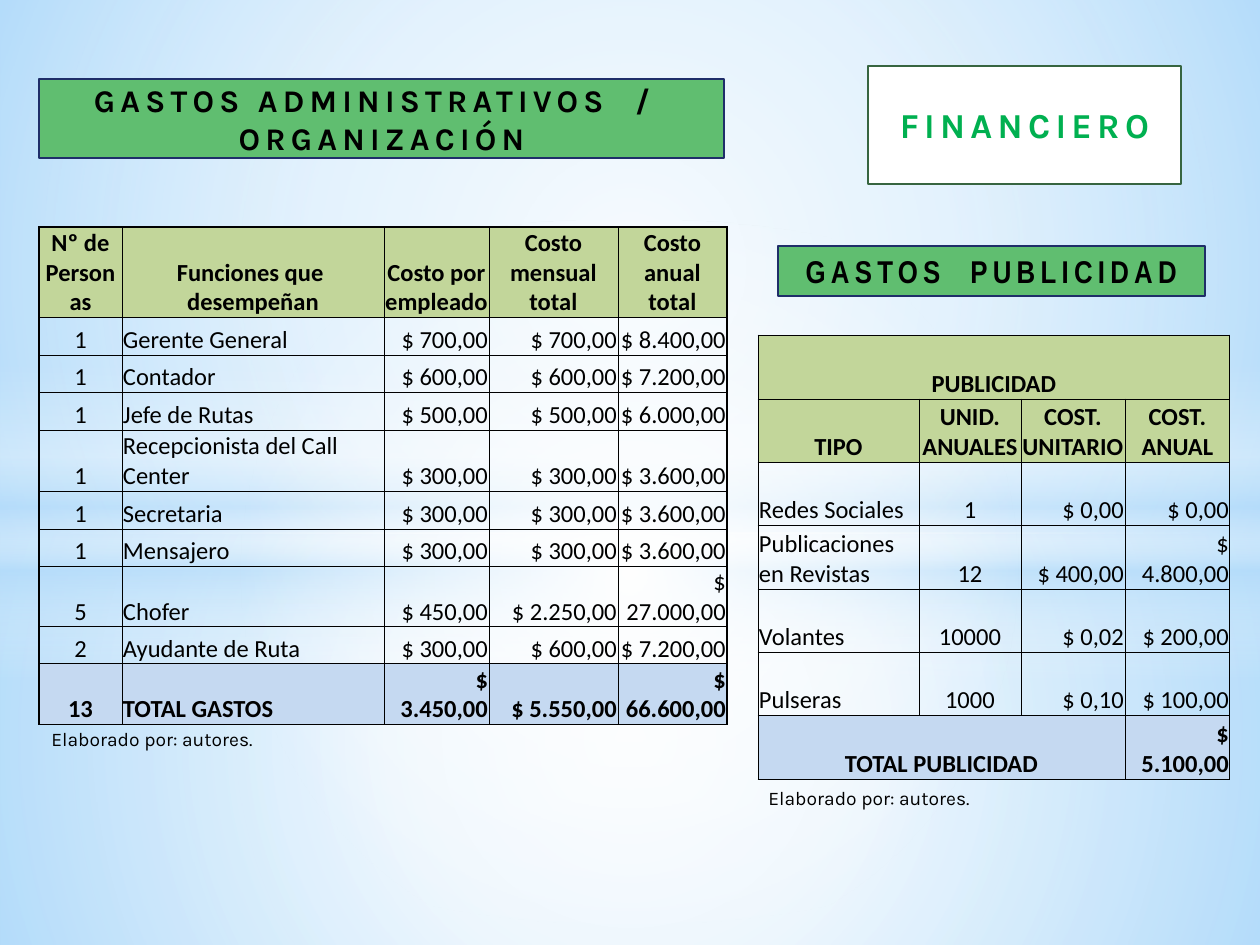
from dataclasses import dataclass
from typing import Optional

from lxml.etree import SubElement
from pptx import Presentation
from pptx.dml.color import RGBColor
from pptx.enum.shapes import MSO_SHAPE
from pptx.enum.text import MSO_ANCHOR, MSO_AUTO_SIZE, PP_ALIGN
from pptx.oxml.ns import qn
from pptx.util import Pt

EMU_PER_PX = 914400 / 126

WHITE = RGBColor(0xFF, 0xFF, 0xFF)
BLACK = RGBColor(0x00, 0x00, 0x00)
SKY = RGBColor(0xB4, 0xDC, 0xFA)
GREEN = RGBColor(0x60, 0xBE, 0x70)
NAVY = RGBColor(0x1F, 0x2E, 0x69)
DARK_GREEN = RGBColor(0x37, 0x65, 0x40)
TEXT_GREEN = RGBColor(0x00, 0xB0, 0x50)
LIME = RGBColor(0x81, 0xD3, 0x1A)
HEADER_FILL = RGBColor(0xC2, 0xD6, 0x9A)
TOTAL_FILL = RGBColor(0xC5, 0xD9, 0xF1)

LEFT, CENTER, RIGHT = PP_ALIGN.LEFT, PP_ALIGN.CENTER, PP_ALIGN.RIGHT
Box = tuple[int, int, int, int]


@dataclass
class Glow:
    box: Box
    stops: list[tuple[int, RGBColor, int]]  # position %, colour, opacity %
    preset: MSO_SHAPE = MSO_SHAPE.RECTANGLE
    radial: bool = True


@dataclass
class Banner:
    box: Box
    text: str
    font: str = "Karla"
    size: int = 18
    fill: RGBColor = GREEN
    line: RGBColor = NAVY
    color: RGBColor = BLACK
    outline: Optional[RGBColor] = None


@dataclass
class CostTable:
    left: int
    top: int
    columns: list[int]
    rows: list[int]
    alignments: list[PP_ALIGN]
    cells: list[list[str]]
    header_rows: int
    edge_points: float
    merges: list[tuple[int, int, int]]  # row, first column, last column


GLOWS = [
    Glow((0, 533, 1260, 412), [(0, WHITE, 91), (37, WHITE, 76), (100, SKY, 79)]),
    Glow((0, 0, 1260, 533), [(0, WHITE, 89), (48, WHITE, 62), (100, SKY, 79)]),
    Glow((0, 365, 1260, 315),
         [(0, WHITE, 0), (29, WHITE, 30), (45, SKY, 40),
          (55, WHITE, 26), (65, SKY, 60), (100, WHITE, 0)], radial=False),
    Glow((0, 220, 1260, 703), [(0, WHITE, 100), (54, WHITE, 0)], MSO_SHAPE.OVAL),
]

BANNERS = [
    Banner((39, 79, 685, 79), "GASTOS ADMINISTRATIVOS  /  ORGANIZACIÓN"),
    Banner((778, 246, 427, 50), "GASTOS  PUBLICIDAD", "Arial Narrow"),
    Banner((868, 66, 313, 118), "FINANCIERO", size=20, fill=WHITE,
           line=DARK_GREEN, color=TEXT_GREEN, outline=LIME),
]

STAFF_TABLE = CostTable(
    39, 227, [83, 262, 105, 129, 109], [74, *[38, 37] * 4, 39],
    [CENTER, LEFT, RIGHT, RIGHT, RIGHT],
    [
        ["Nº de\nPersonas", "Funciones que \ndesempeñan", "Costo por\nempleado",
         "Costo mensual\ntotal", "Costo anual\ntotal"],
        ["1", "Gerente General", "$ 700,00", "$ 700,00", "$ 8.400,00"],
        ["1", "Contador", "$ 600,00", "$ 600,00", "$ 7.200,00"],
        ["1", "Jefe de Rutas", "$ 500,00", "$ 500,00", "$ 6.000,00"],
        ["1", "Recepcionista del Call Center", "$ 300,00", "$ 300,00", "$ 3.600,00"],
        ["1", "Secretaria", "$ 300,00", "$ 300,00", "$ 3.600,00"],
        ["1", "Mensajero", "$ 300,00", "$ 300,00", "$ 3.600,00"],
        ["5", "Chofer", "$ 450,00", "$ 2.250,00", "$ 27.000,00"],
        ["2", "Ayudante de Ruta", "$ 300,00", "$ 600,00", "$ 7.200,00"],
        ["13", "TOTAL GASTOS", "$ 3.450,00", "$ 5.550,00", "$ 66.600,00"],
    ], header_rows=1, edge_points=1, merges=[])

ADVERTISING_TABLE = CostTable(
    758, 335, [161, 102, 104, 105], [64, 63, 63, 64, 63, 63, 64],
    [LEFT, CENTER, RIGHT, RIGHT],
    [
        ["PUBLICIDAD", "", "", ""],
        ["TIPO", "UNID. ANUALES", "COST. UNITARIO", "COST. ANUAL"],
        ["Redes Sociales", "1", "$ 0,00", "$ 0,00"],
        ["Publicaciones en Revistas", "12", "$ 400,00", "$ 4.800,00"],
        ["Volantes", "10000", "$ 0,02", "$ 200,00"],
        ["Pulseras", "1000", "$ 0,10", "$ 100,00"],
        ["TOTAL PUBLICIDAD", "", "", "$ 5.100,00"],
    ], header_rows=2, edge_points=0.5, merges=[(0, 0, 3), (6, 0, 2)])

CREDIT_BOXES = [(39, 721, 238, 37), (756, 780, 238, 37)]


def px(length: int) -> int:
    return round(length * EMU_PER_PX)


def place(box: Box) -> list[int]:
    return [px(length) for length in box]


def add_line(parent, tag: str, color: RGBColor, points: float):
    line = SubElement(parent, qn(tag), w=str(Pt(points)))
    SubElement(SubElement(line, qn("a:solidFill")), qn("a:srgbClr"), val=str(color))
    return line


def format_runs(paragraph, font: str, size: int, color: RGBColor, bold: bool) -> None:
    for run in paragraph.runs:
        run.font.name, run.font.size, run.font.bold = font, Pt(size), bold
        run.font.color.rgb = color


def draw_glow(slide, glow: Glow) -> None:
    shape = slide.shapes.add_shape(glow.preset, *place(glow.box))
    shape.shadow.inherit = False
    shape.line.fill.background()
    shape.fill.solid()
    properties = shape._element.spPr
    gradient = properties.makeelement(qn("a:gradFill"), {"rotWithShape": "1"})
    stops = SubElement(gradient, qn("a:gsLst"))
    for position, color, opacity in glow.stops:
        stop = SubElement(stops, qn("a:gs"), pos=str(position * 1000))
        tint = SubElement(stop, qn("a:srgbClr"), val=str(color))
        SubElement(tint, qn("a:alpha"), val=str(opacity * 1000))
    if glow.radial:
        path = SubElement(gradient, qn("a:path"), {"path": "circle"})
        SubElement(path, qn("a:fillToRect"), dict.fromkeys("ltrb", "50000"))
    else:
        SubElement(gradient, qn("a:lin"), ang="5400000", scaled="0")
    properties.replace(properties.find(qn("a:solidFill")), gradient)


def draw_banner(slide, banner: Banner) -> None:
    shape = slide.shapes.add_shape(MSO_SHAPE.RECTANGLE, *place(banner.box))
    shape.shadow.inherit = False
    shape.fill.solid()
    shape.fill.fore_color.rgb = banner.fill
    shape.line.color.rgb = banner.line
    shape.line.width = Pt(1.25)
    shape.text_frame.text = banner.text
    shape.text_frame.vertical_anchor = MSO_ANCHOR.MIDDLE
    paragraph = shape.text_frame.paragraphs[0]
    paragraph.alignment = CENTER
    format_runs(paragraph, banner.font, banner.size, banner.color, True)
    run_properties = paragraph.runs[0].font._element
    run_properties.set("spc", "300")
    if banner.outline:
        run_properties.insert(0, add_line(run_properties, "a:ln", banner.outline, 0.75))


def draw_table(slide, data: CostTable) -> None:
    box = (data.left, data.top, sum(data.columns), sum(data.rows))
    last_row, last_column = len(data.rows) - 1, len(data.columns) - 1
    table = slide.shapes.add_table(last_row + 1, last_column + 1, *place(box)).table
    table.first_row = table.horz_banding = False
    for column, width in zip(table.columns, data.columns):
        column.width = px(width)
    for row, height in zip(table.rows, data.rows):
        row.height = px(height)
    merged_starts = {(row, first) for row, first, _ in data.merges}
    for row, texts in enumerate(data.cells):
        header, total = row < data.header_rows, row == last_row
        for column, text in enumerate(texts):
            cell = table.cell(row, column)
            cell.vertical_anchor = MSO_ANCHOR.BOTTOM
            cell.margin_left = cell.margin_right = cell.margin_top = px(1)
            cell.margin_bottom = 0
            # Borders come before the fill in the cell properties
            edges = {"L": column == 0, "R": column == last_column,
                     "T": row == 0, "B": total}
            for side, outer in edges.items():
                add_line(cell._tc.get_or_add_tcPr(), f"a:ln{side}", BLACK,
                         data.edge_points if outer else 0.5)
            if header or total:
                cell.fill.solid()
                cell.fill.fore_color.rgb = HEADER_FILL if header else TOTAL_FILL
            else:
                cell.fill.background()
            paragraph = cell.text_frame.paragraphs[0]
            paragraph.text = text
            centered = header or (row, column) in merged_starts
            paragraph.alignment = CENTER if centered else data.alignments[column]
            format_runs(paragraph, "Calibri", 14, BLACK, header or total)
    for row, first, last in data.merges:
        table.cell(row, first).merge(table.cell(row, last))


def draw_credit(slide, box: Box) -> None:
    text_frame = slide.shapes.add_textbox(*place(box)).text_frame
    text_frame.word_wrap = True
    text_frame.auto_size = MSO_AUTO_SIZE.SHAPE_TO_FIT_TEXT
    text_frame.text = "Elaborado por: autores."
    format_runs(text_frame.paragraphs[0], "Karla", 11, BLACK, False)


def main() -> None:
    presentation = Presentation()
    presentation.slide_width, presentation.slide_height = px(1260), px(945)
    slide = presentation.slides.add_slide(presentation.slide_layouts[6])

    # Sky background
    slide.background.fill.solid()
    slide.background.fill.fore_color.rgb = SKY
    for glow in GLOWS:
        draw_glow(slide, glow)

    # Headings, tables and credits
    for banner in BANNERS:
        draw_banner(slide, banner)
    for table in (STAFF_TABLE, ADVERTISING_TABLE):
        draw_table(slide, table)
    for box in CREDIT_BOXES:
        draw_credit(slide, box)

    presentation.save("out.pptx")


if __name__ == "__main__":
    main()
